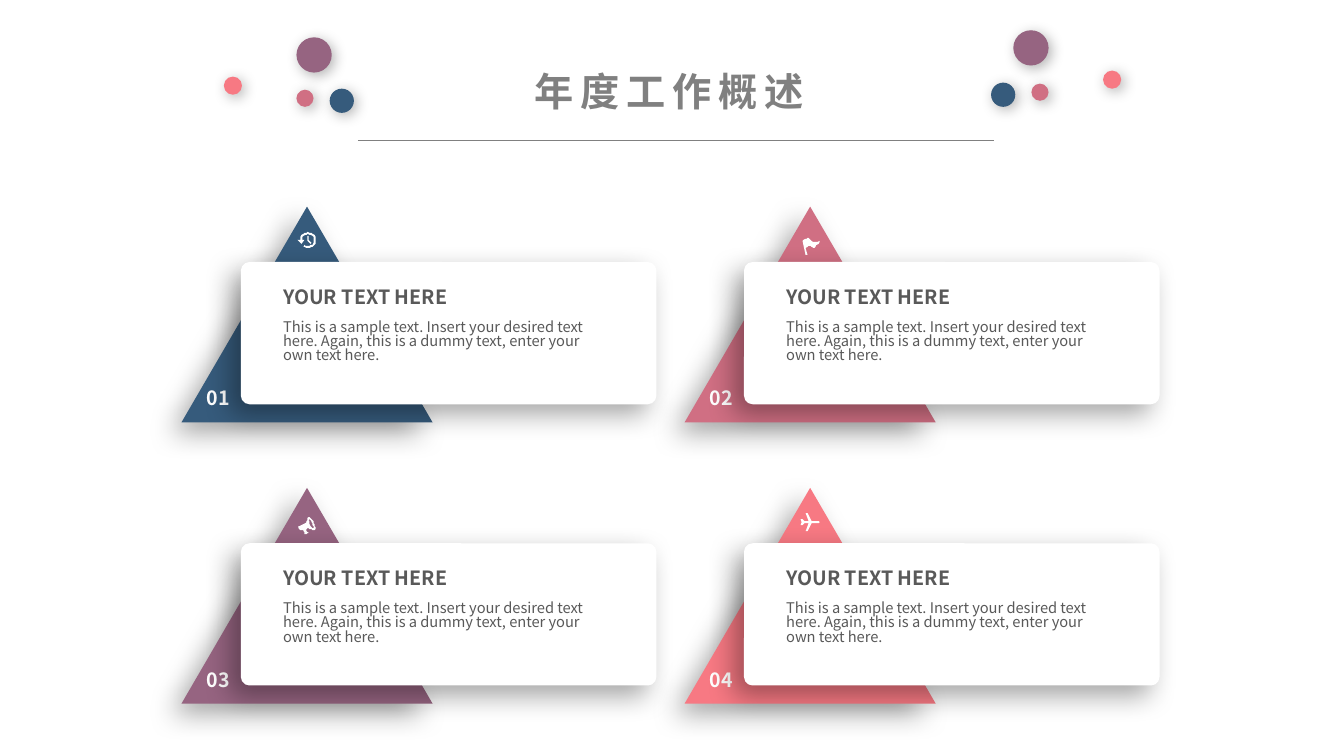
from dataclasses import dataclass
from typing import NamedTuple

from lxml.etree import SubElement
from pptx import Presentation
from pptx.dml.color import RGBColor
from pptx.enum.shapes import MSO_CONNECTOR as Connector, MSO_SHAPE as Preset
from pptx.enum.text import MSO_ANCHOR as Anchor, MSO_AUTO_SIZE as AutoSize, PP_ALIGN as Align
from pptx.oxml.ns import qn
from pptx.shapes.base import BaseShape
from pptx.slide import Slide
from pptx.util import Inches, Pt

Contour = list[tuple[int, int]]


@dataclass(frozen=True)
class Theme:
    font: str = "Noto Sans CJK SC"
    navy: str = "365B7C"
    rose: str = "D06F83"
    plum: str = "966481"
    coral: str = "F77983"
    white: str = "FFFFFF"
    shade: str = "000000"
    title: str = "808080"
    text: str = "595959"
    title_size: float = 28
    heading_size: float = 14
    body_size: float = 10.5


class Box(NamedTuple):
    left: float
    top: float
    width: float
    height: float

    def lengths(self) -> list[int]:
        return [Inches(value) for value in self]


class Shadow(NamedTuple):
    opacity: int
    blur: int
    distance: int
    angle: int


class TextStyle(NamedTuple):
    size: float
    color: str
    bold: bool = True
    line_spacing: float = 0.9
    inset: float = 0


class Icon(NamedTuple):
    left: float
    top: float
    contours: list[Contour]


class Panel(NamedTuple):
    number: str
    color: str
    icon: Icon


class Dot(NamedTuple):
    left: float
    top: float
    diameter: float
    color: str


THEME = Theme()
PANEL_SHADOW = Shadow(34, 20, 10, 136)
DOT_SHADOW = Shadow(30, 10, 3, 45)
TITLE_STYLE = TextStyle(THEME.title_size, THEME.title, inset=0.05)
NUMBER_STYLE = TextStyle(THEME.heading_size, THEME.white, inset=0.05)
HEADING_STYLE = TextStyle(THEME.heading_size, THEME.text)
BODY_STYLE = TextStyle(THEME.body_size, THEME.text, False, 0.82)
COLUMN_STEP, ROW_STEP = 4.99, 2.79
BODY = ("This is a sample text. Insert your desired text here. "
        "Again, this is a dummy text, enter your own text here.")

HISTORY = Icon(2.95, 2.3, [
    [(10, 4), (11, 4), (11, 8), (14, 11), (13, 12), (10, 9)],
    [(10, 0), (12, 1), (14, 1), (15, 2), (17, 3), (18, 5), (18, 12), (17, 13), (15, 15),
     (14, 15), (12, 16), (9, 16), (7, 15), (6, 15), (7, 13), (8, 14), (12, 14), (13, 13),
     (15, 13), (16, 11), (16, 5), (15, 4), (13, 3), (12, 3), (10, 2), (9, 3), (8, 3),
     (6, 4), (5, 5), (5, 8), (7, 8), (4, 12), (0, 8), (3, 8), (3, 5), (4, 3), (6, 2),
     (7, 1), (9, 1)]])
FLAG = Icon(7.96, 2.36, [
    [(6, 0), (7, 1), (10, 4), (15, 4), (17, 3), (17, 4), (16, 6), (14, 7), (13, 8),
     (13, 9), (12, 10), (10, 10), (10, 9), (9, 9), (8, 8), (6, 8), (5, 9), (3, 10),
     (5, 17), (3, 17), (0, 3), (1, 2), (3, 1), (4, 1), (5, 0)]])
MEGAPHONE = Icon(2.96, 5.13, [
    [(11, 2), (10, 3), (11, 4), (11, 7), (12, 9), (14, 11), (15, 11), (15, 9), (14, 8),
     (14, 6), (13, 5), (13, 4), (12, 3)],
    [(11, 0), (15, 4), (15, 6), (16, 7), (16, 9), (17, 10), (17, 12), (16, 13), (14, 13),
     (13, 12), (11, 12), (10, 11), (9, 11), (8, 12), (8, 14), (9, 15), (10, 15), (10, 16),
     (9, 16), (8, 17), (6, 17), (6, 15), (5, 14), (5, 13), (2, 13), (0, 11), (0, 9),
     (1, 9), (7, 6), (8, 5), (8, 4), (9, 3), (9, 1), (10, 0)]])
PLANE = Icon(7.94, 5.09, [
    [(5, 0), (7, 0), (11, 8), (18, 8), (19, 9), (18, 10), (11, 10), (7, 18), (5, 18),
     (8, 10), (4, 10), (2, 12), (0, 12), (1, 9), (0, 6), (2, 6), (4, 8), (8, 8)]])

PANELS = [
    Panel("01", THEME.navy, HISTORY),
    Panel("02", THEME.rose, FLAG),
    Panel("03", THEME.plum, MEGAPHONE),
    Panel("04", THEME.coral, PLANE),
]
DOTS = [
    Dot(2.94, 0.89, 0.17, THEME.rose),
    Dot(2.94, 0.37, 0.35, THEME.plum),
    Dot(3.27, 0.88, 0.24, THEME.navy),
    Dot(2.22, 0.76, 0.18, THEME.coral),
    Dot(10.23, 0.83, 0.17, THEME.rose),
    Dot(10.05, 0.3, 0.35, THEME.plum),
    Dot(9.83, 0.82, 0.24, THEME.navy),
    Dot(10.94, 0.7, 0.18, THEME.coral),
]


def paint(shape: BaseShape, color: str) -> None:
    shape.shadow.inherit = False
    shape.fill.solid()
    shape.fill.fore_color.rgb = RGBColor.from_string(color)
    shape.line.fill.background()


def add_preset(slide: Slide, preset: Preset, box: Box, color: str, shadow: Shadow) -> BaseShape:
    shape = slide.shapes.add_shape(preset, *box.lengths())
    paint(shape, color)
    effects = shape._element.spPr.find(qn("a:effectLst"))
    outer = SubElement(effects, qn("a:outerShdw"), blurRad=str(Pt(shadow.blur)),
                       dist=str(Pt(shadow.distance)), dir=str(shadow.angle * 60000),
                       algn="ctr", rotWithShape="0")
    tint = SubElement(outer, qn("a:srgbClr"), val=THEME.shade)
    SubElement(tint, qn("a:alpha"), val=str(shadow.opacity * 1000))
    return shape


def write(shape: BaseShape, text: str, style: TextStyle, align: Align = Align.LEFT) -> None:
    frame = shape.text_frame
    frame.word_wrap = True
    frame.auto_size = AutoSize.NONE
    frame.vertical_anchor = Anchor.TOP
    frame.margin_left = frame.margin_right = Inches(0.1)
    frame.margin_top = frame.margin_bottom = Inches(style.inset)
    paragraph = frame.paragraphs[0]
    paragraph.alignment = align
    paragraph.line_spacing = style.line_spacing
    run = paragraph.add_run()
    run.text = text
    run.font.size = Pt(style.size)
    run.font.bold = style.bold
    run.font.color.rgb = RGBColor.from_string(style.color)
    run.font.name = THEME.font
    SubElement(run._r.get_or_add_rPr(), qn("a:ea"), typeface=THEME.font)


def add_text(slide: Slide, box: Box, text: str, style: TextStyle) -> None:
    write(slide.shapes.add_textbox(*box.lengths()), text, style)


def add_icon(slide: Slide, icon: Icon) -> None:
    first, *others = icon.contours
    builder = slide.shapes.build_freeform(*first[0], scale=Inches(0.01))
    builder.add_line_segments(first[1:])
    for contour in others:
        builder.move_to(*contour[0])
        builder.add_line_segments(contour[1:])
    paint(builder.convert_to_shape(Inches(icon.left), Inches(icon.top)), THEME.white)


def add_triangle(slide: Slide, panel: Panel, x: float, y: float) -> None:
    add_preset(slide, Preset.ISOSCELES_TRIANGLE, Box(x, y, 2.49, 2.14), panel.color, PANEL_SHADOW)
    add_text(slide, Box(x + 0.15, y + 1.76, 0.49, 0.34), panel.number, NUMBER_STYLE)
    add_icon(slide, panel.icon)


def add_card(slide: Slide, x: float, y: float) -> None:
    card = add_preset(slide, Preset.ROUNDED_RECTANGLE, Box(x + 0.6, y + 0.56, 4.1, 1.39),
                      THEME.white, PANEL_SHADOW)
    card.adjustments[0] = 0.054
    card.line.color.rgb = RGBColor.from_string(THEME.white)
    card.line.width = Pt(1.5)
    add_text(slide, Box(x + 0.91, y + 1.13, 3.43, 0.64), BODY, BODY_STYLE)
    add_text(slide, Box(x + 0.91, y + 0.8, 2.02, 0.25), "YOUR TEXT HERE", HEADING_STYLE)


def add_title(slide: Slide) -> None:
    title = slide.shapes.title
    title.left, title.top, title.width, title.height = Box(5.15, 0.67, 2.98, 0.57).lengths()
    write(title, "年度工作概述", TITLE_STYLE, Align.CENTER)
    title.text_frame.word_wrap = False
    title.text_frame.paragraphs[0].runs[0]._r.get_or_add_rPr().set("spc", "500")
    rule = slide.shapes.add_connector(Connector.STRAIGHT, Inches(3.55), Inches(1.39),
                                      Inches(9.86), Inches(1.39))
    rule.line.color.rgb = RGBColor.from_string(THEME.title)
    rule.line.width = Pt(0.5)
    SubElement(rule._element.spPr, qn("a:effectLst"))


def main() -> None:
    presentation = Presentation()
    presentation.slide_width, presentation.slide_height = Inches(13.33), Inches(7.5)
    slide = presentation.slides.add_slide(presentation.slide_layouts[5])
    corners = [(1.8 + index % 2 * COLUMN_STEP, 2.05 + index // 2 * ROW_STEP)
               for index in range(len(PANELS))]
    for panel, corner in zip(PANELS, corners):
        add_triangle(slide, panel, *corner)
    for corner in corners:
        add_card(slide, *corner)
    add_title(slide)
    for dot in DOTS:
        box = Box(dot.left, dot.top, dot.diameter, dot.diameter)
        add_preset(slide, Preset.OVAL, box, dot.color, DOT_SHADOW)
    presentation.save("out.pptx")


if __name__ == "__main__":
    main()
